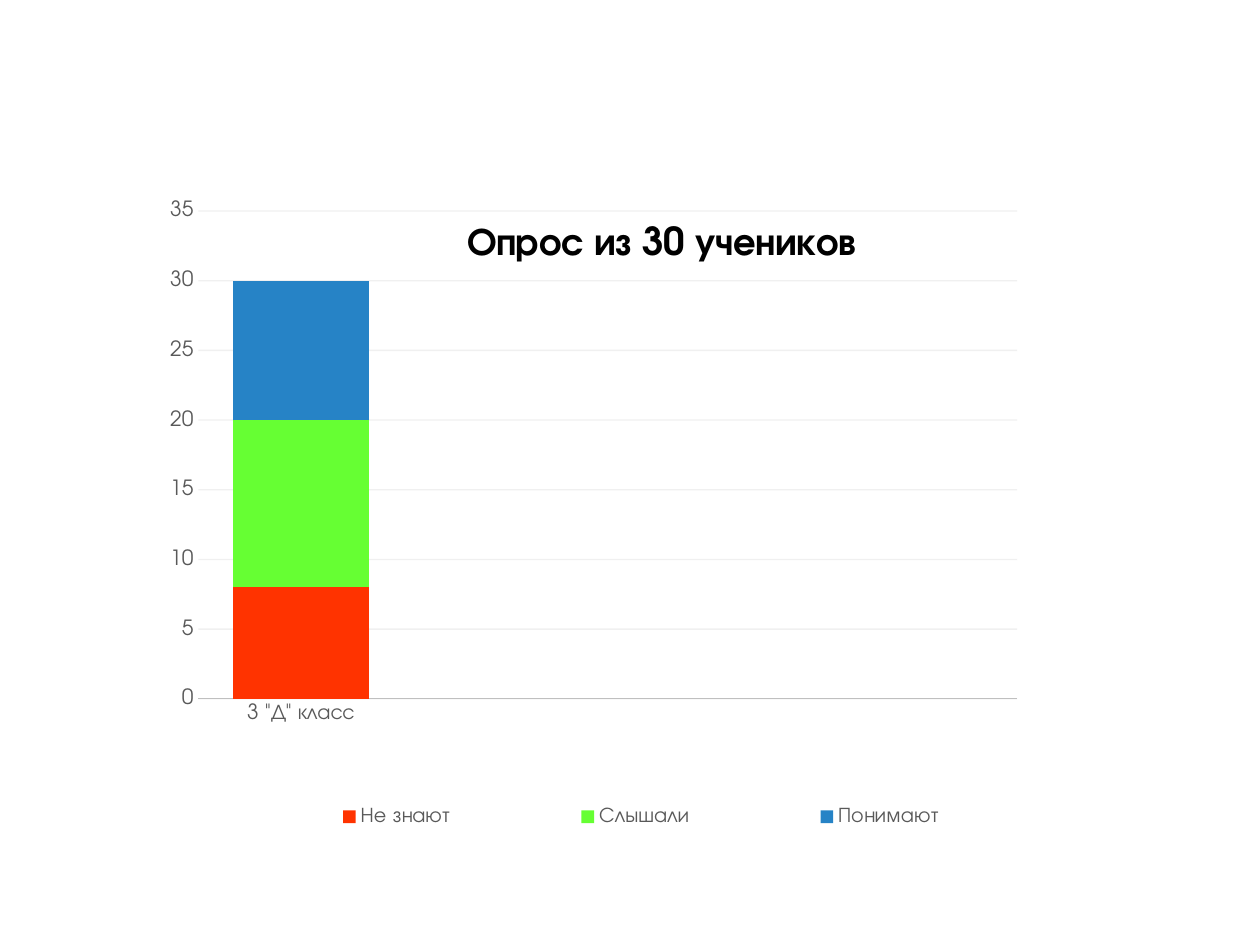
import pptx
import pptx.chart.data
import pptx.dml.color
import pptx.enum.chart
import pptx.oxml
import pptx.oxml.ns
import pptx.util

FONT = "TeX Gyre Adventor"
CATEGORIES = ['3 "Д" класс', "", "", ""]
SERIES = [
    ("Не знают", 8, "FF3300"),
    ("Слышали", 12, "66FF33"),
    ("Понимают", 10, "2683C6"),
]


def color(value):
    """Turn a hex string into a colour."""
    return pptx.dml.color.RGBColor.from_string(value)


def style_font(font, size, value, bold=False):
    """Set the typeface, size, colour and weight of a font."""
    font.name = FONT
    font.size = pptx.util.Pt(size)
    font.bold = bold
    font.color.rgb = color(value)


def style_line(line, value):
    """Give a line its colour and the common width."""
    line.width = pptx.util.Pt(0.75)
    line.color.rgb = color(value)


def place(parent, index, **settings):
    """Give a chart part a manual layout as its child at the index."""
    for old in parent.findall(pptx.oxml.ns.qn("c:layout")):
        parent.remove(old)
    entries = "".join(f'<c:{name} val="{value}"/>' for name, value in settings.items())
    parent.insert(index, pptx.oxml.parse_xml(
        f'<c:layout {pptx.oxml.ns.nsdecls("c")}><c:manualLayout>{entries}'
        "</c:manualLayout></c:layout>"))


def add_survey_chart(page):
    """Add the stacked column chart with its series colours."""
    data = pptx.chart.data.CategoryChartData()
    data.categories = CATEGORIES
    for name, count, _ in SERIES:
        data.add_series(name, [count, None, None, None])
    inches = pptx.util.Inches
    chart = page.shapes.add_chart(
        pptx.enum.chart.XL_CHART_TYPE.COLUMN_STACKED,
        inches(0.87), inches(1.55), inches(8.7), inches(5.67), data).chart
    style_font(chart.font, 10, "000000")
    plot = chart.plots[0]
    plot.gap_width = 50
    plot.overlap = 100
    plot.vary_by_categories = False
    for series, (_, _, fill) in zip(plot.series, SERIES):
        series.format.fill.solid()
        series.format.fill.fore_color.rgb = color(fill)
    place(chart.element.xpath(".//c:plotArea")[0], 0, layoutTarget="inner",
          xMode="edge", yMode="edge", x=0.081, y=0.022, w=0.747, h=0.683)
    return chart


def style_axes(chart):
    """Format both axes and the pale gridlines."""
    for axis in (chart.category_axis, chart.value_axis):
        axis.major_tick_mark = pptx.enum.chart.XL_TICK_MARK.NONE
        axis.minor_tick_mark = pptx.enum.chart.XL_TICK_MARK.NONE
        style_font(axis.tick_labels.font, 12, "595959")
    style_line(chart.category_axis.format.line, "BFBFBF")
    values = chart.value_axis
    values.minimum_scale, values.maximum_scale, values.major_unit = 0, 35, 5
    values.format.line.fill.background()
    style_line(values.major_gridlines.format.line, "D9D9D9")
    grid_color = chart.element.xpath(".//c:majorGridlines//a:srgbClr")[0]
    grid_color.append(pptx.oxml.parse_xml(
        f'<a:alpha {pptx.oxml.ns.nsdecls("a")} val="36000"/>'))


def add_title(chart, text):
    """Lay the bold title over the plot."""
    chart.has_title = True
    para = chart.chart_title.text_frame.paragraphs[0]
    para.text = text
    style_font(para.runs[0].font, 22, "000000", bold=True)
    title = chart.element.xpath("./c:chart/c:title")[0]
    place(title, 1, xMode="edge", yMode="edge", x=0.32, y=0.03)
    title.xpath("./c:overlay")[0].set("val", "1")


def add_legend(chart):
    """Spread the legend below the plot."""
    chart.has_legend = True
    chart.legend.position = pptx.enum.chart.XL_LEGEND_POSITION.BOTTOM
    chart.legend.include_in_layout = False
    style_font(chart.legend.font, 12, "595959")
    place(chart.element.xpath(".//c:legend")[0], 1, xMode="edge", yMode="edge",
          x=0.1, y=0.82, w=0.77, h=0.1)


def main():
    """Build the slide and save it."""
    deck = pptx.Presentation()
    deck.slide_width = pptx.util.Inches(10)
    deck.slide_height = pptx.util.Inches(7.5)
    page = deck.slides.add_slide(deck.slide_layouts[6])
    chart = add_survey_chart(page)
    style_axes(chart)
    add_title(chart, "Опрос из 30 учеников")
    add_legend(chart)
    deck.save("out.pptx")


if __name__ == "__main__":
    main()
